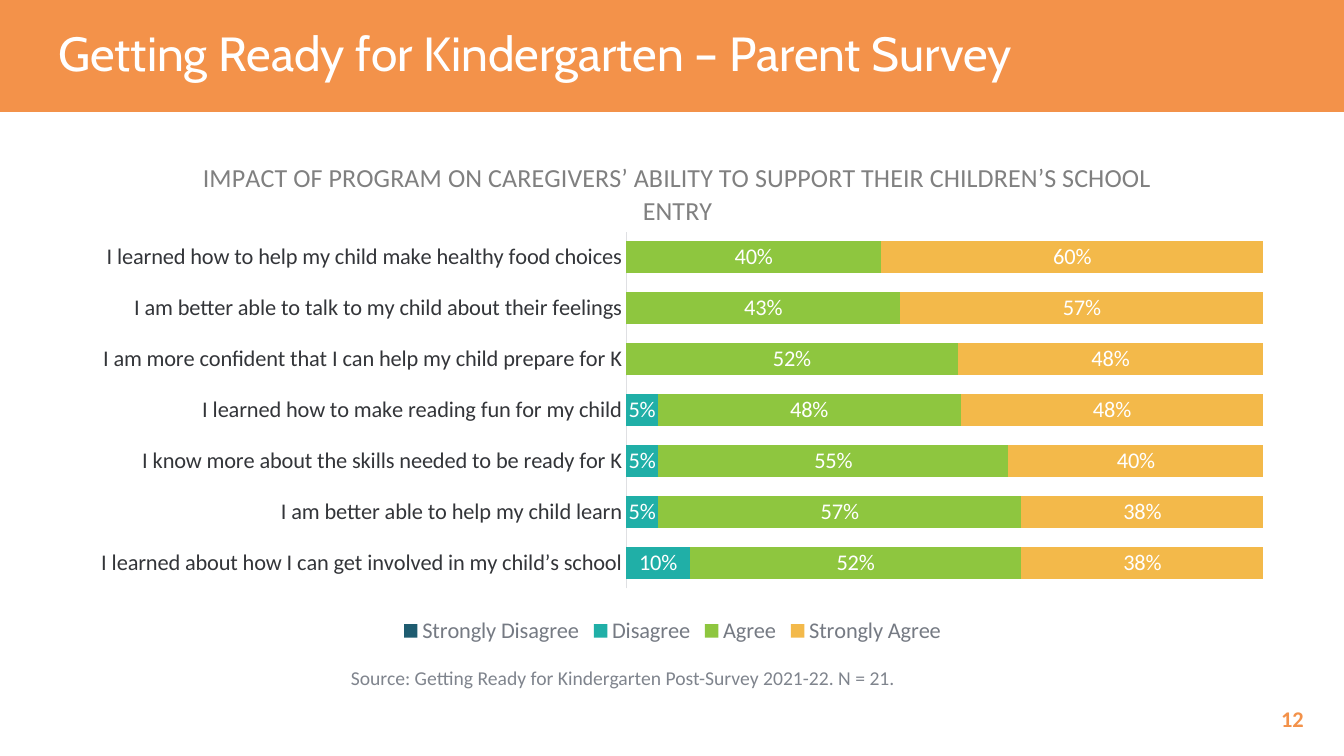
from lxml import etree
from pptx import Presentation
from pptx.chart.data import CategoryChartData
from pptx.dml.color import RGBColor
from pptx.enum.chart import XL_CHART_TYPE as ChartType, XL_LABEL_POSITION as LabelPosition
from pptx.enum.chart import XL_LEGEND_POSITION as LegendPosition, XL_TICK_MARK as TickMark
from pptx.enum.shapes import MSO_SHAPE as Preset
from pptx.enum.text import MSO_ANCHOR as Anchor, PP_ALIGN as Align
from pptx.oxml.ns import qn
from pptx.util import Inches, Pt

ORANGE, WHITE = "F3924A", "FFFFFF"
rgb = RGBColor.from_string


def area(left, top, width, height):
    """Turn percentages of the slide's size into lengths."""
    columns, rows = presentation.slide_width / 100, presentation.slide_height / 100
    return int(left * columns), int(top * rows), int(width * columns), int(height * rows)


def style_font(font, size, color, name="Calibri", bold=False):
    font.size, font.name, font.bold = Pt(size), name, bold
    font.color.rgb = rgb(color)


presentation = Presentation()
presentation.slide_width, presentation.slide_height = Inches(13.33), Inches(7.5)
slide = presentation.slides.add_slide(presentation.slide_layouts[6])

band = slide.shapes.add_shape(Preset.RECTANGLE, *area(0, 0, 100, 14.8))
band.shadow.inherit = False
band.fill.solid()
band.fill.fore_color.rgb = rgb(ORANGE)
band.line.fill.background()

# Text boxes: text, place, size, colour, font, bold, alignment, anchor, indent
texts = [
    ("Getting Ready for Kindergarten – Parent Survey", (3.6, 3.6, 92.57, 7.6),
     34.2, WHITE, "Cabin", False, Align.LEFT, Anchor.MIDDLE, 0),
    ("Source: Getting Ready for Kindergarten Post-Survey 2021-22. N = 21.",
     (23.86, 87.47, 50.04, 4.53), 14, "7F848D", "Calibri", False, Align.LEFT, Anchor.TOP, 0.2),
    ("12", (75.24, 92.4, 22.5, 5.33), 16, ORANGE, "Calibri", True, Align.RIGHT, Anchor.MIDDLE, 0),
]
for text, place, size, color, name, bold, align, anchor, indent in texts:
    frame = slide.shapes.add_textbox(*area(*place)).text_frame
    frame.word_wrap = True
    frame.vertical_anchor = anchor
    frame.text = text
    paragraph = frame.paragraphs[0]
    paragraph.alignment = align
    paragraph.line_spacing = 0.9 if name == "Cabin" else 1.0
    if indent:
        paragraph._p.get_or_add_pPr().set("marL", str(Inches(indent)))
    style_font(paragraph.runs[0].font, size, color, name, bold)

# Survey answers, from the bottom bar to the top one
answers = [
    ("I learned about how I can get involved in my child’s school", 0, 0.1, 0.52, 0.38),
    ("I am better able to help my child learn", 0, 0.05, 0.57, 0.38),
    ("I know more about the skills needed to be ready for K", 0, 0.05, 0.55, 0.4),
    ("I learned how to make reading fun for my child", 0, 0.05, 0.48, 0.48),
    ("I am more confident that I can help my child prepare for K", 0, 0, 0.52, 0.48),
    ("I am better able to talk to my child about their feelings", 0, 0, 0.43, 0.57),
    ("I learned how to help my child make healthy food choices", 0, 0, 0.4, 0.6),
]
levels = {"Strongly Disagree": "1E5C70", "Disagree": "20AFA7",
          "Agree": "8EC63F", "Strongly Agree": "F3B94A"}
statements, *shares = zip(*answers)
chart_data = CategoryChartData(number_format="0%")
chart_data.categories = statements
for level, values in zip(levels, shares):
    chart_data.add_series(level, values)

chart = slide.shapes.add_chart(
    ChartType.BAR_STACKED_100, *area(4.8, 17.73, 90.47, 68.13), chart_data).chart
style_font(chart.font, 10, "333539")

title_frame = chart.chart_title.text_frame
title_frame.text = "IMPACT OF PROGRAM ON CAREGIVERS’ ABILITY TO SUPPORT THEIR CHILDREN’S SCHOOL ENTRY"
style_font(title_frame.paragraphs[0].runs[0].font, 18.6, "808080")

chart.has_legend = True
chart.legend.position = LegendPosition.BOTTOM
chart.legend.include_in_layout = False
style_font(chart.legend.font, 16, "757A83")

category_axis, value_axis = chart.category_axis, chart.value_axis
category_axis.major_tick_mark = category_axis.minor_tick_mark = TickMark.NONE
category_axis.has_major_gridlines = False
category_axis.format.line.color.rgb = rgb("DFE0E3")
category_axis.format.line.width = Pt(0.75)
style_font(category_axis.tick_labels.font, 16, "333539")
value_axis.has_major_gridlines = False
value_axis.minimum_scale, value_axis.maximum_scale = 0, 1
value_axis.visible = False

plot = chart.plots[0]
plot.gap_width, plot.overlap = 60, 100
plot.vary_by_categories = False
for series, color in zip(plot.series, levels.values()):
    series.format.fill.solid()
    series.format.fill.fore_color.rgb = rgb(color)
    if any(series.values):
        labels = series.data_labels
        labels.show_value = True
        labels.position = LabelPosition.CENTER
        labels.number_format, labels.number_format_is_linked = "0%;;", False
        style_font(labels.font, 16, WHITE)

# Manual places of the chart title and the plot, as shares of the chart
chart_element = chart._chartSpace.find(qn("c:chart"))
manual_layouts = [
    ("c:title", 1, {"xMode": "edge", "yMode": "edge", "x": 0.11, "y": 0.04}),
    ("c:plotArea", 0, {"layoutTarget": "inner", "xMode": "edge", "yMode": "edge",
                       "x": 0.462, "y": 0.19, "w": 0.524, "h": 0.692}),
]
for tag, index, settings in manual_layouts:
    parent = chart_element.find(qn(tag))
    for layout in parent.findall(qn("c:layout")):
        parent.remove(layout)
    layout = etree.Element(qn("c:layout"))
    manual = etree.SubElement(layout, qn("c:manualLayout"))
    for key, value in settings.items():
        etree.SubElement(manual, qn(f"c:{key}")).set("val", str(value))
    parent.insert(index, layout)

presentation.save("out.pptx")
